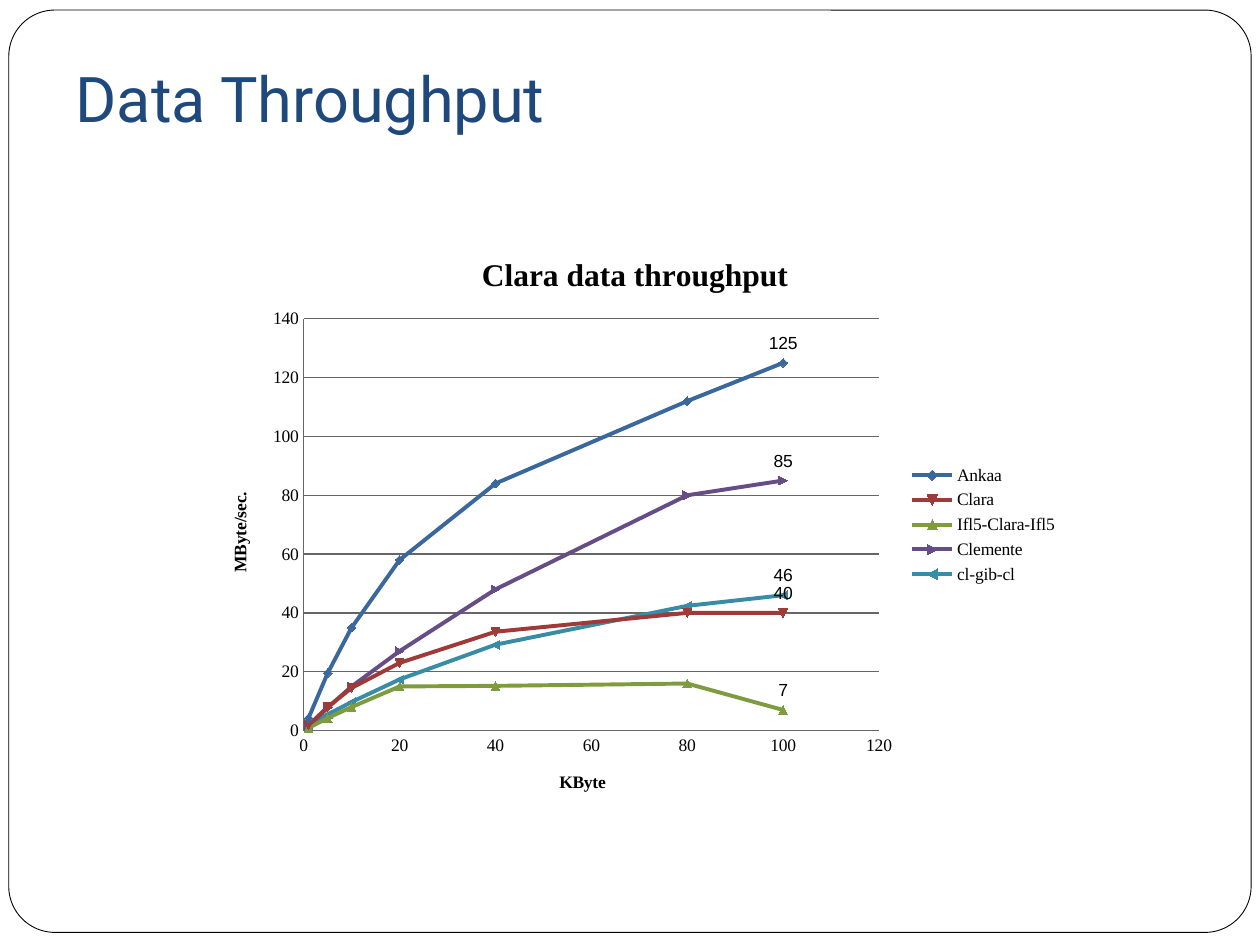
from pptx import Presentation
from pptx.chart.data import XyChartData
from pptx.dml.color import RGBColor
from pptx.enum import chart as kinds, shapes, text
from pptx.oxml import parse_xml
from pptx.oxml.ns import nsdecls
from pptx.util import Inches, Pt

COLORS = {
    "paper": "FFFFFF", "ink": "000000", "title": "1F497D", "grid": "666666",
    "Ankaa": "3A679C", "Clara": "9E3B38", "Ifl5-Clara-Ifl5": "7E9B40",
    "Clemente": "664D85", "cl-gib-cl": "388CA5",
}
KBYTES = [1, 5, 10, 20, 40, 80, 100]
THROUGHPUT = {
    "Ankaa": [4.2, 19.5, 35, 58, 84, 112, 125],
    "Clara": [1.8, 8, 14.5, 23, 33.6, 40, 40],
    "Ifl5-Clara-Ifl5": [0.9, 4.25, 8, 15, 15.2, 16, 7],
    "Clemente": [1.6, 7.75, 15, 27, 48, 80, 85],
    "cl-gib-cl": [1.15, 5.5, 9.7, 17.4, 29.2, 42.4, 46],
}


def color(name):
    return RGBColor.from_string(COLORS[name])


def style(font, size, name="Times New Roman", bold=False, tint="ink"):
    font.size, font.name, font.bold = Pt(size), name, bold
    font.color.rgb = color(tint)


deck = Presentation()
deck.slide_width, deck.slide_height = Inches(10), Inches(7.5)
page = deck.slides.add_slide(deck.slide_layouts[5])

frame = page.shapes.add_shape(
    shapes.MSO_SHAPE.ROUNDED_RECTANGLE,
    Inches(0.07), Inches(0.08), Inches(9.86), Inches(7.32))
frame.adjustments[0] = 0.05
frame.shadow.inherit = False
frame.fill.solid()
frame.fill.fore_color.rgb = color("paper")
frame.line.color.rgb = color("ink")
frame.line.width = Pt(0.5)

title = page.shapes.title
title.left, title.top = Inches(0.5), Inches(0.3)
title.width, title.height = Inches(9), Inches(0.87)
title._element.addprevious(frame._element)
title.text_frame.text = "Data Throughput"
title.text_frame.vertical_anchor = text.MSO_ANCHOR.BOTTOM
title.text_frame.margin_bottom = Inches(0.1)
heading = title.text_frame.paragraphs[0]
heading.alignment = text.PP_ALIGN.LEFT
style(heading.runs[0].font, 36, "Roboto", tint="title")

data = XyChartData()
for name, rates in THROUGHPUT.items():
    series = data.add_series(name)
    for size, rate in zip(KBYTES, rates):
        series.add_data_point(size, rate)
chart = page.shapes.add_chart(
    kinds.XL_CHART_TYPE.XY_SCATTER_SMOOTH,
    Inches(1.58), Inches(1.83), Inches(6.92), Inches(4.67), data).chart
style(chart.font, 10)

chart.has_title = True
chart.chart_title.text_frame.text = "Clara data throughput"
style(chart.chart_title.text_frame.paragraphs[0].runs[0].font, 18, bold=True)
chart.has_legend = True
chart.legend.position = kinds.XL_LEGEND_POSITION.RIGHT
chart.legend.include_in_layout = False

for axis, label, top in ((chart.category_axis, "KByte", 120),
                         (chart.value_axis, "MByte/sec.", 140)):
    axis.minimum_scale, axis.maximum_scale, axis.major_unit = 0, top, 20
    axis.major_tick_mark = axis.minor_tick_mark = kinds.XL_TICK_MARK.NONE
    axis.tick_labels.number_format = "General"
    axis.tick_labels.number_format_is_linked = False
    axis.format.line.color.rgb = color("grid")
    axis.format.line.width = Pt(0.75)
    axis.axis_title.text_frame.text = label
    style(axis.axis_title.text_frame.paragraphs[0].runs[0].font, 10, bold=True)
chart.category_axis.has_major_gridlines = False
grid = chart.value_axis.major_gridlines.format.line
grid.color.rgb = color("grid")
grid.width = Pt(0.75)

for order, series in enumerate(chart.plots[0].series, 1):
    series._element.idx.val = order
    series.smooth = True
    series.format.line.color.rgb = color(series.name)
    series.format.line.width = Pt(2.25)
    series.marker.size = 5
    series.marker.format.fill.solid()
    series.marker.format.fill.fore_color.rgb = color(series.name)
    series.marker.format.line.color.rgb = color(series.name)
    label = series.points[len(KBYTES) - 1].data_label
    label.position = kinds.XL_LABEL_POSITION.ABOVE
    style(label.font, 10, "Arial")

area = chart._chartSpace.chart.plotArea
for old in area.xpath("c:layout"):
    area.remove(old)
area.insert(0, parse_xml(
    f'<c:layout {nsdecls("c")}><c:manualLayout><c:layoutTarget val="inner"/>'
    '<c:xMode val="edge"/><c:yMode val="edge"/><c:x val="0.12"/><c:y val="0.15"/>'
    '<c:w val="0.66"/><c:h val="0.7"/></c:manualLayout></c:layout>'))

deck.save("out.pptx")
